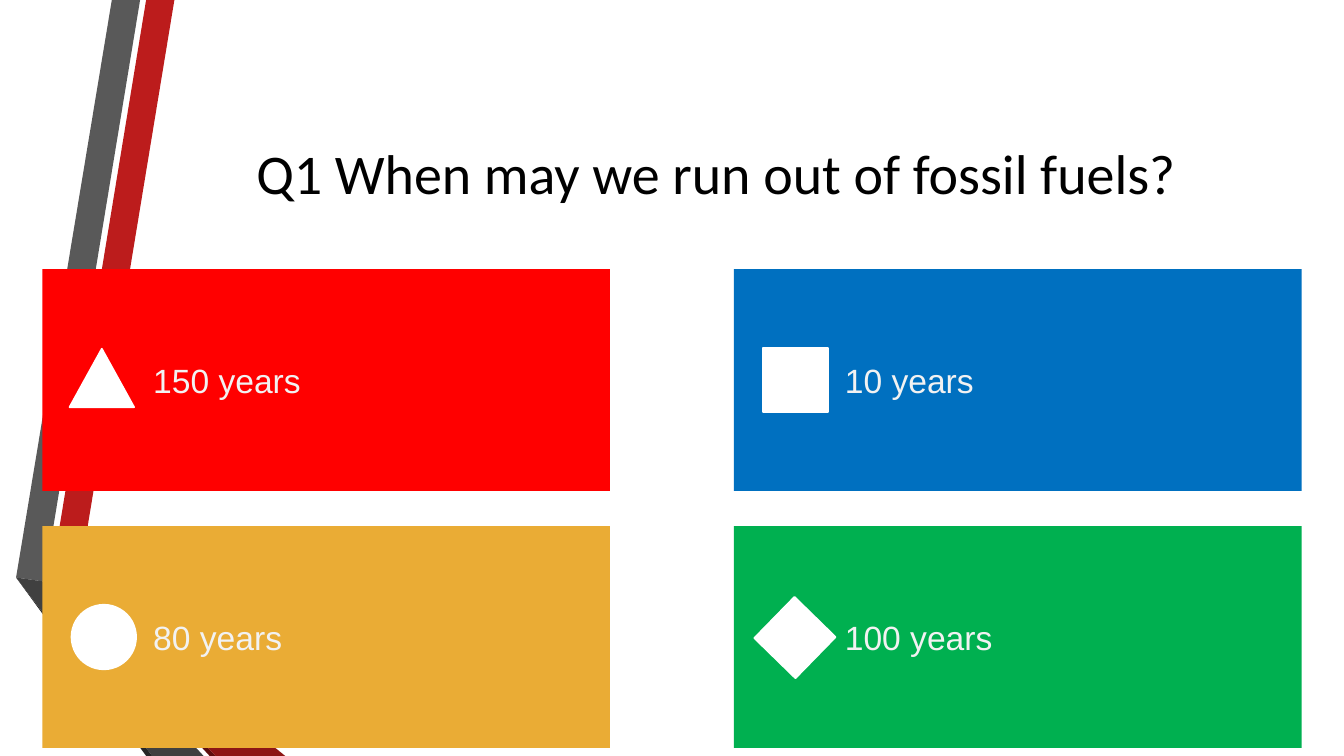
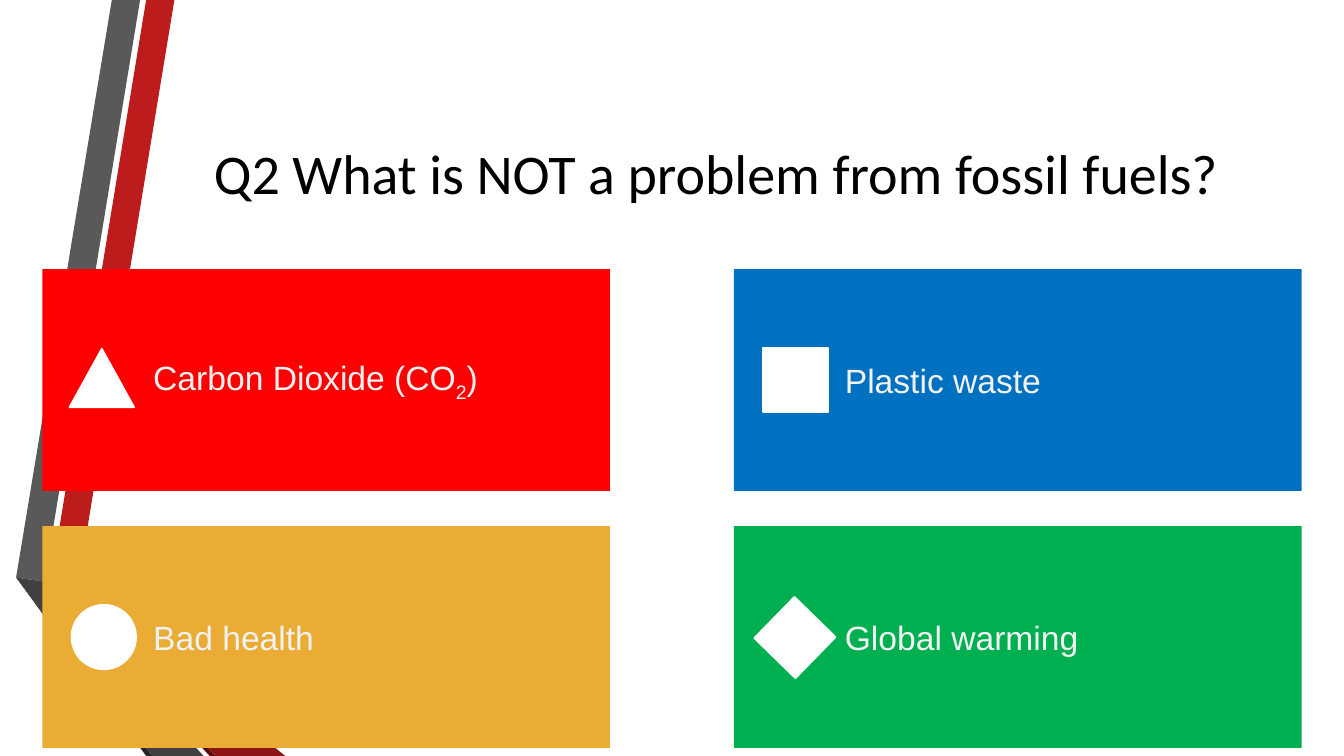
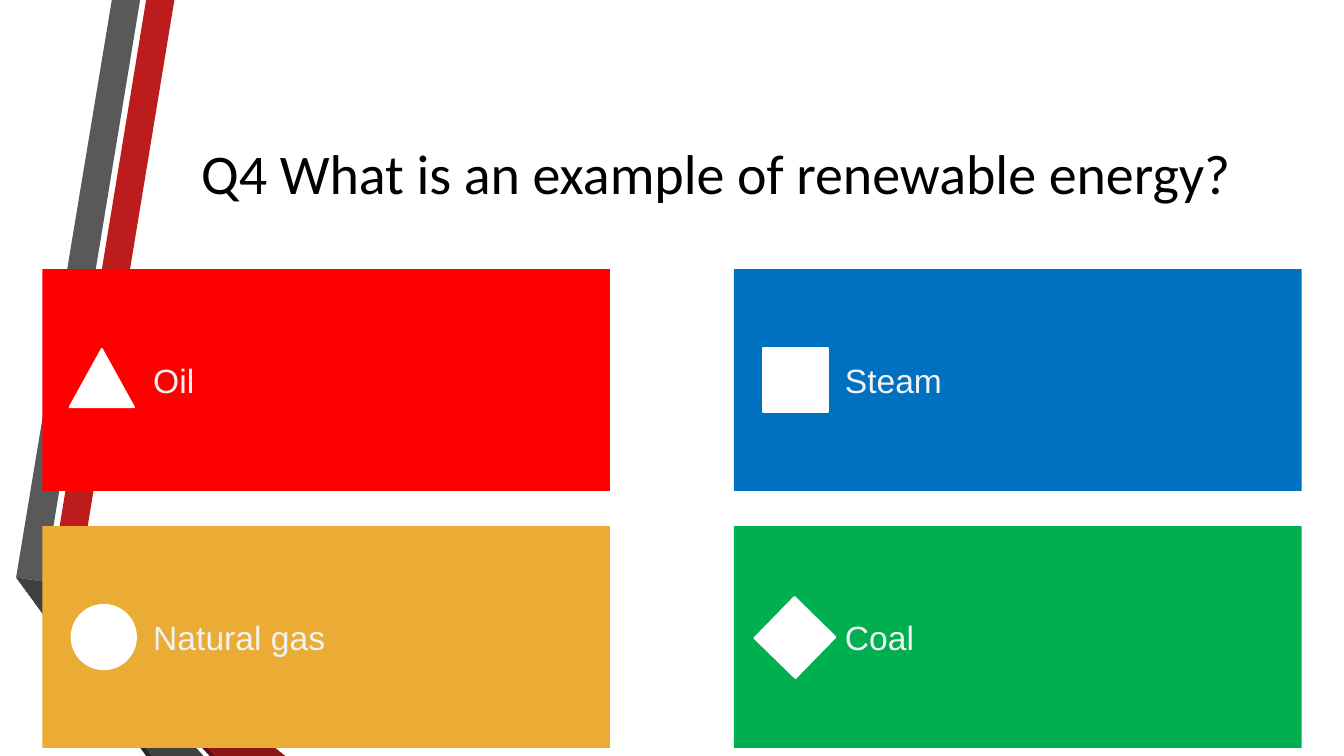
from dataclasses import dataclass

from pptx import Presentation
from pptx.dml.color import RGBColor
from pptx.enum.shapes import MSO_SHAPE as Shape
from pptx.enum.text import MSO_ANCHOR as Anchor, PP_ALIGN as Align
from pptx.util import Inches, Pt

BLACK = RGBColor(0x00, 0x00, 0x00)
WHITE = RGBColor(0xFF, 0xFF, 0xFF)
PALE_GRAY = RGBColor(0xF2, 0xF2, 0xF2)
RED = RGBColor(0xFF, 0x00, 0x00)
BLUE = RGBColor(0x00, 0x70, 0xC0)
AMBER = RGBColor(0xEA, 0xAC, 0x35)
GREEN = RGBColor(0x00, 0xB0, 0x50)

RIBBON_RED = RGBColor(0xBC, 0x1C, 0x1C)
RIBBON_RED_FOLD = RGBColor(0x8D, 0x15, 0x15)
RIBBON_RED_EDGE = RGBColor(0x5E, 0x0E, 0x0E)
RIBBON_GRAY = RGBColor(0x59, 0x59, 0x59)
RIBBON_GRAY_FOLD = RGBColor(0x40, 0x40, 0x40)
RIBBON_GRAY_EDGE = RGBColor(0x26, 0x26, 0x26)

TITLE_FONT, TITLE_SIZE = "Calibri", Pt(40)
ANSWER_FONT, ANSWER_SIZE = "Arial", Pt(24)

TITLE_ONLY_LAYOUT = 5
TILE_LEFT, TILE_TOP = 0.42, 2.67
TILE_WIDTH, TILE_HEIGHT = 5.63, 2.2
COLUMN_STEP, ROW_STEP = 6.86, 2.55

RIBBONS = [
    (RIBBON_RED, [(0.5, 5.78), (0.77, 5.83), (1.73, 0), (1.45, 0)]),
    (RIBBON_GRAY, [(1.39, 0), (1.11, 0), (0.16, 5.73), (0.44, 5.77)]),
    (RIBBON_GRAY_EDGE, [(0.16, 5.73), (1.45, 7.5), (1.51, 7.5)]),
    (RIBBON_RED_EDGE, [(0.5, 5.79), (2.08, 7.5), (2.14, 7.5)]),
    (RIBBON_RED_FOLD, [(0.5, 5.79), (2.14, 7.5), (2.83, 7.5), (0.77, 5.83), (0.5, 5.78)]),
    (RIBBON_GRAY_FOLD, [(2.02, 7.5), (0.48, 5.83), (0.44, 5.77), (0.16, 5.73), (1.51, 7.5)]),
]


@dataclass
class Symbol:
    """A white mark; left and top are measured from its tile's corner."""
    kind: Shape
    left: float
    top: float
    width: float
    height: float
    rotation: float = 0


# Row by row, in the order of the answers.
TILES = [
    (RED, Symbol(Shape.ISOSCELES_TRIANGLE, 0.27, 0.79, 0.64, 0.58)),
    (BLUE, Symbol(Shape.RECTANGLE, 0.29, 0.78, 0.64, 0.64)),
    (AMBER, Symbol(Shape.OVAL, 0.29, 0.78, 0.64, 0.64)),
    (GREEN, Symbol(Shape.RECTANGLE, 0.32, 0.82, 0.57, 0.57, 314.3)),
]

# Every second part between bars is a subscript.
QUESTIONS = [
    ("Q1 When may we run out of fossil fuels?",
     ["150 years", "10 years", "80 years", "100 years"]),
    ("Q2 What is NOT a problem from fossil fuels?",
     ["Carbon Dioxide (CO|2|)", "Plastic waste", "Bad health", "Global warming"]),
    ("Q4 What is an example of renewable energy?",
     ["Oil", "Steam", "Natural gas", "Coal"]),
]


def fill_shape(shape, color):
    shape.shadow.inherit = False
    shape.fill.solid()
    shape.fill.fore_color.rgb = color
    shape.line.fill.background()


def format_run(run, font, size, color):
    run.font.name = font
    run.font.size = size
    run.font.color.rgb = color


def add_ribbons(layout, slide):
    """Draw the ribbons on a slide, then move them behind the layout's parts."""
    for index, (color, points) in enumerate(RIBBONS):
        corners = [(Inches(x), Inches(y)) for x, y in points]
        builder = slide.shapes.build_freeform(*corners[0])
        builder.add_line_segments(corners[1:], close=True)
        ribbon = builder.convert_to_shape()
        fill_shape(ribbon, color)
        layout.shapes.element.insert(2 + index, ribbon.element)


def set_title(slide, text):
    title = slide.shapes.title
    title.left, title.top = Inches(1.62), Inches(0.75)
    title.width, title.height = Inches(10.96), Inches(1.92)
    title.text_frame.text = text
    title.text_frame.vertical_anchor = Anchor.MIDDLE
    paragraph = title.text_frame.paragraphs[0]
    paragraph.alignment = Align.CENTER
    format_run(paragraph.runs[0], TITLE_FONT, TITLE_SIZE, BLACK)


def write_answer(text_frame, answer):
    text_frame.word_wrap = True
    text_frame.vertical_anchor = Anchor.MIDDLE
    text_frame.margin_left = Inches(1.1)
    paragraph = text_frame.paragraphs[0]
    paragraph.alignment = Align.LEFT
    paragraph.space_before, paragraph.space_after = Pt(4.8), Pt(6)
    for index, part in enumerate(answer.split("|")):
        run = paragraph.add_run()
        run.text = part
        format_run(run, ANSWER_FONT, ANSWER_SIZE, PALE_GRAY)
        if index % 2:
            run._r.get_or_add_rPr().set("baseline", "-25000")


def add_symbol(slide, symbol, left, top):
    shape = slide.shapes.add_shape(
        symbol.kind, Inches(left + symbol.left), Inches(top + symbol.top),
        Inches(symbol.width), Inches(symbol.height))
    fill_shape(shape, WHITE)
    shape.line.color.rgb = WHITE
    shape.line.width = Pt(1.25)
    shape.rotation = symbol.rotation


def add_tile(slide, index, answer):
    color, symbol = TILES[index]
    row, column = divmod(index, 2)
    left = TILE_LEFT + column * COLUMN_STEP
    top = TILE_TOP + row * ROW_STEP
    tile = slide.shapes.add_shape(
        Shape.RECTANGLE, Inches(left), Inches(top),
        Inches(TILE_WIDTH), Inches(TILE_HEIGHT))
    fill_shape(tile, color)
    write_answer(tile.text_frame, answer)
    add_symbol(slide, symbol, left, top)


def main():
    presentation = Presentation()
    presentation.slide_width = Inches(13.33)
    presentation.slide_height = Inches(7.5)
    layout = presentation.slide_layouts[TITLE_ONLY_LAYOUT]
    for number, (question, answers) in enumerate(QUESTIONS):
        slide = presentation.slides.add_slide(layout)
        if number == 0:
            add_ribbons(layout, slide)
        set_title(slide, question)
        for index, answer in enumerate(answers):
            add_tile(slide, index, answer)
    presentation.save("out.pptx")


if __name__ == "__main__":
    main()
